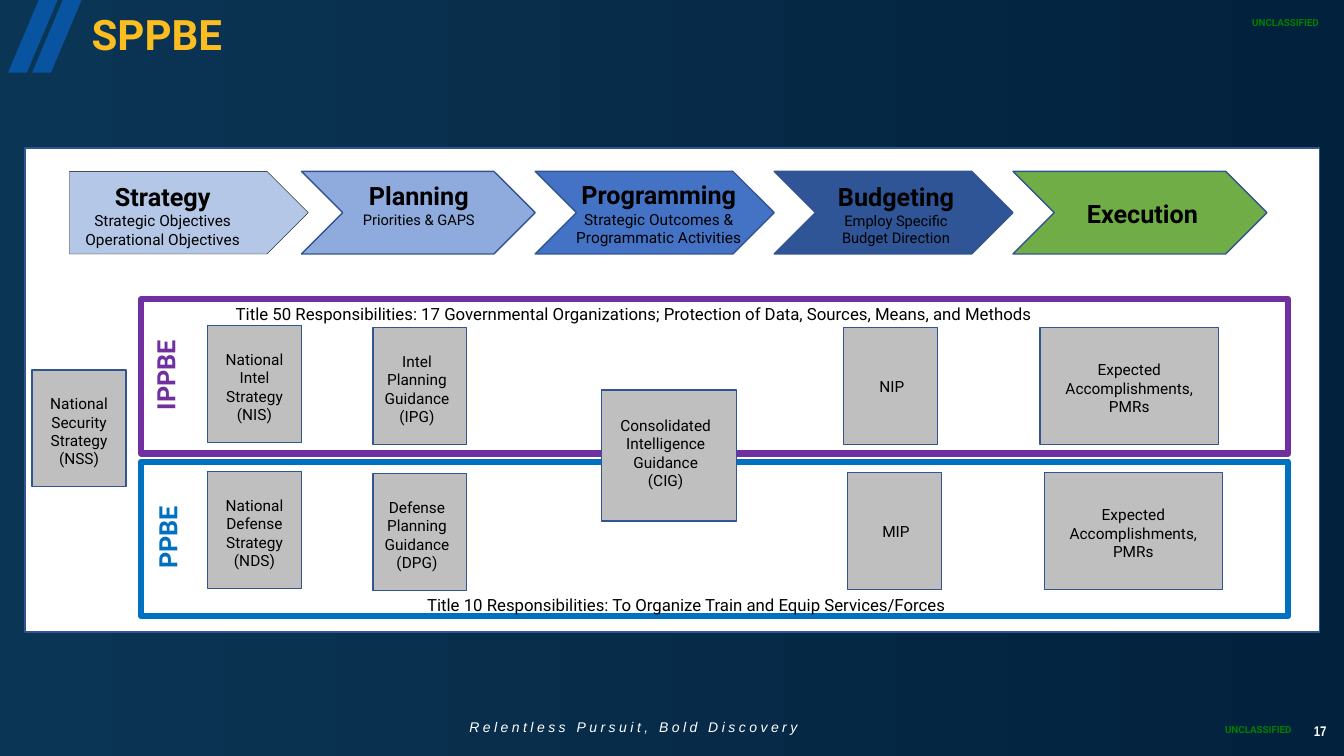
from pptx import Presentation
from pptx.dml.color import RGBColor
from pptx.enum.shapes import MSO_SHAPE
from pptx.enum.text import MSO_ANCHOR, MSO_AUTO_SIZE, PP_ALIGN
from pptx.util import Pt

RECTANGLE, CHEVRON = MSO_SHAPE.RECTANGLE, MSO_SHAPE.CHEVRON
PENTAGON, PARALLELOGRAM = MSO_SHAPE.PENTAGON, MSO_SHAPE.PARALLELOGRAM
LEFT, CENTER, RIGHT = PP_ALIGN.LEFT, PP_ALIGN.CENTER, PP_ALIGN.RIGHT
TOP, MIDDLE = MSO_ANCHOR.TOP, MSO_ANCHOR.MIDDLE

BLACK, WHITE, GRAY, OUTLINE = "000000", "FFFFFF", "BFBFBF", "325491"
GOLD, GREEN, STRIPE = "FBBD1F", "008000", "0954A0"
PURPLE, BLUE = "7030A0", "0070C0"
BACKGROUND = ["02213C", "0B3555"]

TITLE = "SPPBE"
MOTTO = "Relentless Pursuit, Bold Discovery"
MARKING = "UNCLASSIFIED"
MARKING_PLACES = [(748.8, 3.6), (729.4, 509)]
PAGE = "17"

STAGE_TOP, STAGE_HEIGHT = 122.4, 59
STAGES = [
    (PENTAGON, 49.7, 220.3, "B4C7E7", BLACK, 0.25),
    (CHEVRON, 215.3, 382.3, "8FAADC", OUTLINE, 1),
    (CHEVRON, 382.3, 553, "4472C4", OUTLINE, 1),
    (CHEVRON, 553, 723.6, "2F5597", OUTLINE, 1),
    (CHEVRON, 723.6, 905, "70AD47", OUTLINE, 1),
]
STAGE_TEXTS = [
    ((37.4, 126, 157.7, 55), "Strategy", "Strategic Objectives Operational Objectives", 11),
    ((251.3, 125.3, 95.8, 55), "Planning", "Priorities & GAPS", 10.5),
    ((394.6, 124.6, 151.9, 55), "Programming", "Strategic Outcomes & Programmatic Activities", 11),
    ((583.9, 126, 112.3, 55), "Budgeting", "Employ Specific Budget Direction", 10.5),
    ((761, 138.2, 110.2, 29), "Execution", None, None),
]

FRAME_LEFT, FRAME_WIDTH, FRAME_HEIGHT = 100.8, 819.4, 110.2
TRACKS = [
    (213.8, PURPLE, "IPPBE", (68.4, 253.4), (161.3, 213.1, 741, 21.6),
     "Title 50 Responsibilities: 17 Governmental Organizations; Protection of Data, Sources, Means, and Methods"),
    (329.8, BLUE, "PPBE", (69.8, 369.4), (298, 421.2, 511, 21.6),
     "Title 10 Responsibilities: To Organize Train and Equip Services/Forces"),
]

SMALL, WIDE, LARGE = (67, 83.5), (127.4, 83.5), (96.5, 93.6)
DOCUMENTS = [
    (23, 264.2, SMALL, 0, 2, ["National Security Strategy (NSS)"]),
    (148.3, 232.6, SMALL, 0, 2, ["National Intel Strategy (NIS)"]),
    (148.3, 337, SMALL, 0, 2, ["National Defense Strategy (NDS)"]),
    (266.4, 234, SMALL, -2, 2, ["Intel Planning Guidance (IPG)"]),
    (266.4, 338.4, SMALL, -2, 2, ["Defense Planning Guidance (DPG)"]),
    (602.6, 234, SMALL, 1, 0, ["NIP"]),
    (605.5, 337.7, SMALL, 1, 0, ["MIP"]),
    (743, 234, WIDE, 0, 1.5, ["Expected Accomplishments, PMRs"]),
    (745.9, 337.7, WIDE, 0, 1.5, ["Expected Accomplishments, PMRs"]),
    (429.8, 278.6, LARGE, -2.5, -2, ["Consolidated Intelligence Guidance", "(CIG)"]),
]
DOCUMENT_MARGIN = 5


def color(value):
    return RGBColor.from_string(value)


def apply(target, values):
    for name, value in values.items():
        setattr(target, name, value)


def write(shape, lines, ink=BLACK, align=CENTER, anchor=TOP, spacing=1,
          margins=(7.2, 3.6, 7.2, 3.6), **font_values):
    frame = shape.text_frame
    left, top, right, bottom = margins
    apply(frame, {
        "word_wrap": True, "auto_size": MSO_AUTO_SIZE.NONE, "vertical_anchor": anchor,
        "margin_left": Pt(left), "margin_top": Pt(top),
        "margin_right": Pt(right), "margin_bottom": Pt(bottom),
    })
    for index, (text, size, bold) in enumerate(lines):
        paragraph = frame.add_paragraph() if index else frame.paragraphs[0]
        apply(paragraph, {"alignment": align, "line_spacing": spacing, "space_before": Pt(0)})
        run = paragraph.add_run()
        run.text = text
        apply(run.font, {"name": "Roboto", "size": Pt(size), "bold": bold, **font_values})
        run.font.color.rgb = color(ink)
    return shape


def add_text(slide, place, lines, **options):
    return write(slide.shapes.add_textbox(*map(Pt, place)), lines, **options)


def add_box(slide, kind, place, fill=None, line=None, width=1):
    shape = slide.shapes.add_shape(kind, *map(Pt, place))
    shape.shadow.inherit = False
    if fill:
        shape.fill.solid()
        shape.fill.fore_color.rgb = color(fill)
    else:
        shape.fill.background()
    if line:
        shape.line.color.rgb = color(line)
        shape.line.width = Pt(width)
    else:
        shape.line.fill.background()
    return shape


def add_surroundings(slide):
    fill = slide.background.fill
    fill.gradient()
    fill.gradient_angle = 180
    for stop, value in zip(fill.gradient_stops, BACKGROUND):
        stop.color.rgb = color(value)
    for left in (23, 5.8):
        stripe = add_box(slide, PARALLELOGRAM, (left, 0, 35.3, 51.8), STRIPE)
        stripe.adjustments[0] = 0.62
    title = slide.shapes.title
    apply(title, {"left": Pt(58.3), "top": Pt(5.8), "width": Pt(877), "height": Pt(41.8)})
    write(title, [(TITLE, 30, True)], ink=GOLD, align=LEFT, anchor=MIDDLE, spacing=0.9)
    motto = add_text(slide, (280.8, 509.8, 343.4, 19.4), [(MOTTO, 10, False)],
                     ink=WHITE, name="Arial", italic=True)
    motto.text_frame.paragraphs[0].runs[0]._r.get_or_add_rPr().set("spc", "250")
    for left, top in MARKING_PLACES:
        add_text(slide, (left, top, 200.2, 25.9), [(MARKING, 7, True)],
                 ink=GREEN, align=RIGHT, anchor=MIDDLE, spacing=0.9)
    add_text(slide, (921.6, 509.8, 29.5, 25.9), [(PAGE, 10, True)], ink=WHITE, align=RIGHT,
             anchor=MIDDLE, spacing=0.9, margins=(3.6,) * 4, name="Arial Narrow")


def add_stages(slide):
    for kind, left, right, fill, line, width in STAGES:
        add_box(slide, kind, (left, STAGE_TOP, right - left, STAGE_HEIGHT), fill, line, width)
    for place, heading, detail, size in STAGE_TEXTS:
        lines = [(heading, 18, True)]
        if detail:
            lines.append((detail, size, False))
        add_text(slide, place, lines)


def add_tracks(slide):
    for top, tint, label, (label_left, label_top), place, duty in TRACKS:
        add_box(slide, RECTANGLE, (FRAME_LEFT, top, FRAME_WIDTH, FRAME_HEIGHT), line=tint, width=4.5)
        add_text(slide, place, [(duty, 12, False)], align=LEFT)
        name = add_text(slide, (label_left, label_top, 99.4, 28.8), [(label, 18, True)], ink=tint)
        name.rotation = 270


def add_documents(slide):
    for left, top, size, across, down, texts in DOCUMENTS:
        document = add_box(slide, RECTANGLE, (left, top, *size), GRAY, OUTLINE)
        margins = [DOCUMENT_MARGIN + shift for shift in (across, down, -across, -down)]
        write(document, [(text, 11, False) for text in texts], anchor=MIDDLE, margins=margins)


def main():
    presentation = Presentation()
    apply(presentation, {"slide_width": Pt(960), "slide_height": Pt(540)})
    slide = presentation.slides.add_slide(presentation.slide_layouts[5])
    add_surroundings(slide)
    add_box(slide, RECTANGLE, (18, 105.8, 924.5, 345.6), WHITE, OUTLINE)
    add_stages(slide)
    add_tracks(slide)
    add_documents(slide)
    presentation.save("out.pptx")


if __name__ == "__main__":
    main()
